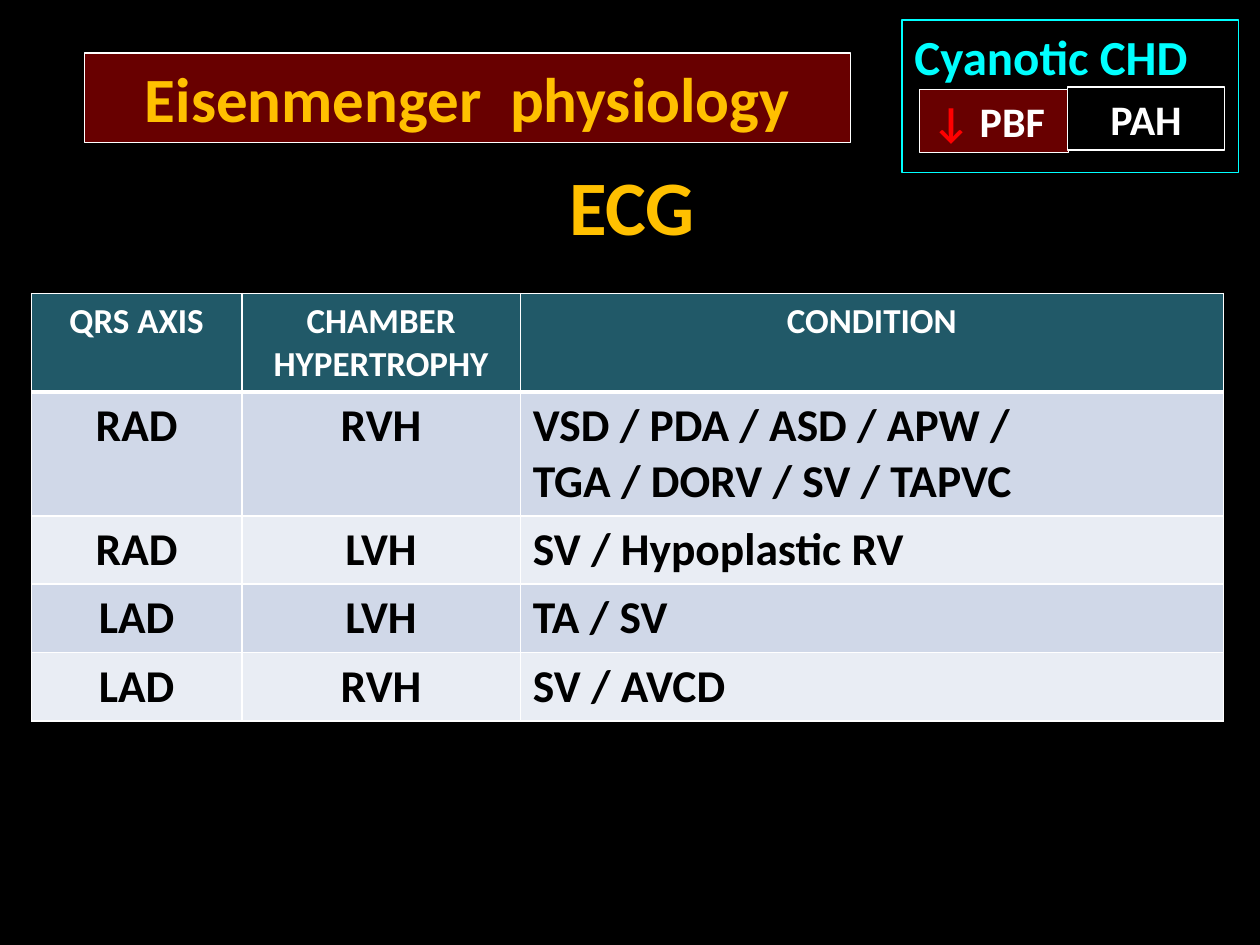
from dataclasses import dataclass

from lxml import etree
from pptx import Presentation
from pptx.dml.color import RGBColor
from pptx.enum.shapes import MSO_SHAPE
from pptx.enum.text import MSO_ANCHOR, PP_ALIGN
from pptx.oxml.ns import qn
from pptx.util import Inches, Pt

RECTANGLE = MSO_SHAPE.RECTANGLE
LEFT, CENTER = PP_ALIGN.LEFT, PP_ALIGN.CENTER
TOP, MIDDLE = MSO_ANCHOR.TOP, MSO_ANCHOR.MIDDLE
FONT = "Calibri"
BLACK, WHITE, GOLD = "000000", "FFFFFF", "FFC000"
MAROON, CYAN, RED, TEAL = "680000", "00FFFF", "FF0000", "215968"
BANDS = ("D0D8E8", "E9EDF4")


@dataclass
class Span:
    text: str
    size: float
    color: str


@dataclass
class Label:
    left: float
    top: float
    width: float
    height: float
    fill: str
    line: str
    spans: list[Span]
    align: PP_ALIGN = CENTER
    anchor: MSO_ANCHOR = MIDDLE
    wrap: bool = True


TITLE = Label(0.67, 0.42, 6.08, 0.71, MAROON, WHITE,
              [Span("Eisenmenger  physiology", 36, GOLD)])
HEADING = Span("ECG", 44, GOLD)
CATEGORY_LABELS = [
    Label(7.16, 0.16, 2.67, 1.21, BLACK, CYAN,
          [Span("Cyanotic CHD", 28, CYAN)], LEFT, TOP),
    Label(7.3, 0.71, 1.18, 0.5, MAROON, WHITE,
          [Span("↓", 24, RED), Span(" PBF", 24, WHITE)], LEFT, wrap=False),
    Label(8.47, 0.69, 1.25, 0.5, BLACK, WHITE, [Span("PAH", 24, WHITE)]),
]
COLUMN_WIDTHS = (1.67, 2.21, 5.58)
ROW_HEIGHTS = (0.78, 0.98, 0.54, 0.54, 0.54)
ECG_ROWS = [
    ("QRS AXIS", "CHAMBER HYPERTROPHY", "CONDITION"),
    ("RAD", "RVH", "VSD / PDA / ASD / APW /\nTGA / DORV / SV / TAPVC"),
    ("RAD", "LVH", "SV / Hypoplastic RV"),
    ("LAD", "LVH", "TA / SV"),
    ("LAD", "RVH", "SV / AVCD"),
]


def rgb(color: str) -> RGBColor:
    return RGBColor.from_string(color)


def set_fill(target, color: str) -> None:
    target.fill.solid()
    target.fill.fore_color.rgb = rgb(color)


def write(para, spans: list[Span], align: PP_ALIGN) -> None:
    para.alignment = align
    for span in spans:
        run = para.add_run()
        run.text = span.text
        run.font.name = FONT
        run.font.size = Pt(span.size)
        run.font.bold = True
        run.font.color.rgb = rgb(span.color)


def style_label(box, label: Label) -> None:
    set_fill(box, label.fill)
    box.line.color.rgb = rgb(label.line)
    box.line.width = Pt(0.75)
    frame = box.text_frame
    frame.word_wrap = label.wrap
    frame.vertical_anchor = label.anchor
    write(frame.paragraphs[0], label.spans, label.align)


def place_title(page, label: Label) -> None:
    title = page.shapes.title
    title.left, title.top = Inches(label.left), Inches(label.top)
    title.width, title.height = Inches(label.width), Inches(label.height)
    style_label(title, label)


def draw_label(shapes, label: Label) -> None:
    box = shapes.add_shape(RECTANGLE, Inches(label.left), Inches(label.top),
                           Inches(label.width), Inches(label.height))
    box.shadow.inherit = False
    style_label(box, label)


def set_border(cell, side: str, points: float) -> None:
    properties = cell._tc.get_or_add_tcPr()
    line = etree.SubElement(properties, qn(f"a:ln{side}"), w=str(Pt(points)))
    solid = etree.SubElement(line, qn("a:solidFill"))
    etree.SubElement(solid, qn("a:srgbClr"), val=WHITE)


def draw_table(page) -> None:
    frame = page.shapes.add_table(
        len(ECG_ROWS), len(COLUMN_WIDTHS), Inches(0.25), Inches(2.33),
        Inches(sum(COLUMN_WIDTHS)), Inches(sum(ROW_HEIGHTS)))
    table = frame.table
    for column, width in zip(table.columns, COLUMN_WIDTHS):
        column.width = Inches(width)
    for row, height in zip(table.rows, ROW_HEIGHTS):
        row.height = Inches(height)
    for row_index, texts in enumerate(ECG_ROWS):
        header = row_index == 0
        size, color = (20, WHITE) if header else (26, BLACK)
        fill = TEAL if header else BANDS[(row_index - 1) % 2]
        for column_index, text in enumerate(texts):
            cell = table.cell(row_index, column_index)
            set_border(cell, "L", 1)
            set_border(cell, "R", 1)
            set_border(cell, "T", 3 if row_index == 1 else 1)
            set_border(cell, "B", 3 if header else 1)
            set_fill(cell, fill)
            align = CENTER if header or column_index < 2 else LEFT
            for line_index, line in enumerate(text.split("\n")):
                content = cell.text_frame
                para = content.add_paragraph() if line_index else content.paragraphs[0]
                write(para, [Span(line, size, color)], align)


def main() -> None:
    deck = Presentation()
    deck.slide_width, deck.slide_height = Inches(10), Inches(7.5)
    page = deck.slides.add_slide(deck.slide_layouts[5])
    set_fill(page.background, BLACK)
    place_title(page, TITLE)
    draw_table(page)
    heading = page.shapes.add_textbox(Inches(4.39), Inches(1.21), Inches(1.25), Inches(0.84))
    heading.text_frame.word_wrap = False
    write(heading.text_frame.paragraphs[0], [HEADING], CENTER)
    category = page.shapes.add_group_shape()
    for label in CATEGORY_LABELS:
        draw_label(category.shapes, label)
    deck.save("out.pptx")


if __name__ == "__main__":
    main()
